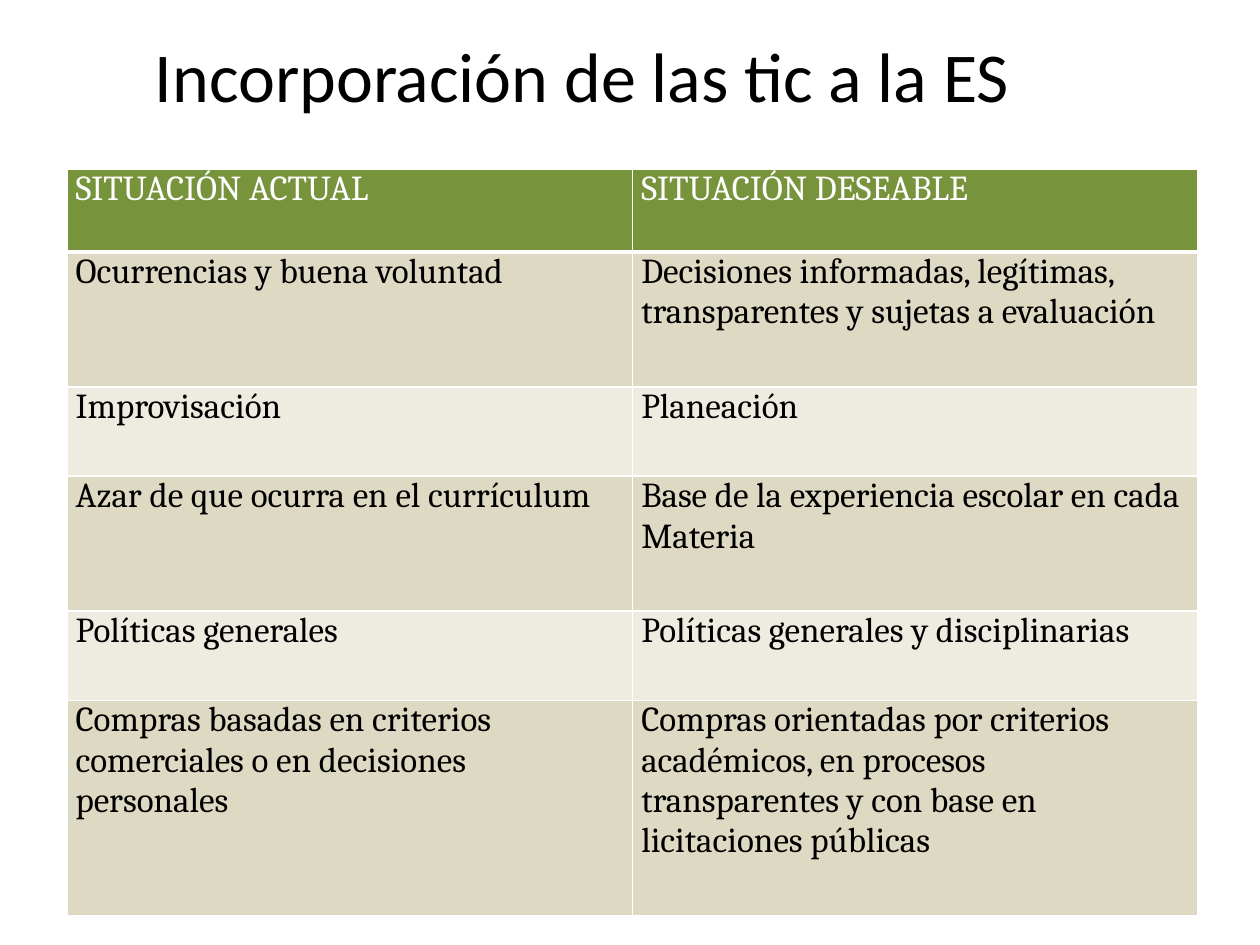
from dataclasses import dataclass

from lxml import etree
from pptx import Presentation, util as u
from pptx.dml.color import RGBColor
from pptx.enum import text
from pptx.oxml import ns


@dataclass(frozen=True)
class Theme:
    title_font: str = "Calibri"
    table_font: str = "Cambria"
    title_size: int = 40
    table_size: int = 20
    black: str = "000000"
    white: str = "FFFFFF"
    header_fill: str = "77933C"
    dark_band: str = "DDD9C3"
    light_band: str = "EEECE1"


@dataclass(frozen=True)
class Comparison:
    current: str
    desired: str
    height: float


THEME = Theme()
COLUMN_WIDTH = 4.49
COMPARISONS = [
    Comparison("SITUACIÓN ACTUAL", "SITUACIÓN DESEABLE", 0.66),
    Comparison("Ocurrencias y buena voluntad",
               "Decisiones informadas, legítimas, transparentes y sujetas a evaluación", 1.07),
    Comparison("Improvisación", "Planeación", 0.71),
    Comparison("Azar de que ocurra en el currículum",
               "Base de la experiencia escolar en cada Materia", 1.07),
    Comparison("Políticas generales", "Políticas generales y disciplinarias", 0.71),
    Comparison("Compras basadas en criterios comerciales o en decisiones personales",
               "Compras orientadas por criterios académicos, en procesos transparentes "
               "y con base en licitaciones públicas", 1.71),
]


def write_text(frame, content: str, *, font: str, size: int, color: str,
               align=text.PP_ALIGN.LEFT) -> None:
    """Put one formatted paragraph into a text frame."""
    frame.word_wrap = True
    paragraph = frame.paragraphs[0]
    paragraph.alignment = align
    run = paragraph.add_run()
    run.text = content
    run.font.name = font
    run.font.size = u.Pt(size)
    run.font.color.rgb = RGBColor.from_string(color)


def set_borders(cell, color: str, bottom_width: int) -> None:
    """Outline a cell; only its bottom edge may be thicker than 1 pt."""
    properties = cell._tc.get_or_add_tcPr()
    for edge, width in (("L", 1), ("R", 1), ("T", 1), ("B", bottom_width)):
        line = etree.SubElement(properties, ns.qn(f"a:ln{edge}"), w=str(u.Pt(width)))
        fill = etree.SubElement(line, ns.qn("a:solidFill"))
        etree.SubElement(fill, ns.qn("a:srgbClr"), val=color)


def draw_cell(cell, content: str, *, fill: str, color: str, bottom_width: int) -> None:
    cell.margin_left = cell.margin_right = u.Inches(0.07)
    cell.margin_top = cell.margin_bottom = 0
    cell.vertical_anchor = text.MSO_ANCHOR.TOP
    set_borders(cell, THEME.white, bottom_width)
    cell.fill.solid()
    cell.fill.fore_color.rgb = RGBColor.from_string(fill)
    write_text(cell.text_frame, content, font=THEME.table_font,
               size=THEME.table_size, color=color)


def draw_title(slide, content: str) -> None:
    title = slide.shapes.title
    title.left, title.top = u.Inches(0.03), u.Inches(0.09)
    title.width, title.height = u.Inches(9.18), u.Inches(1)
    title.text_frame.vertical_anchor = text.MSO_ANCHOR.MIDDLE
    write_text(title.text_frame, content, font=THEME.title_font, size=THEME.title_size,
               color=THEME.black, align=text.PP_ALIGN.CENTER)


def draw_table(slide, comparisons: list[Comparison]) -> None:
    height = sum(comparison.height for comparison in comparisons)
    table = slide.shapes.add_table(
        len(comparisons), 2, u.Inches(0.53), u.Inches(1.34),
        u.Inches(2 * COLUMN_WIDTH), u.Inches(height)).table
    for column in table.columns:
        column.width = u.Inches(COLUMN_WIDTH)
    for index, comparison in enumerate(comparisons):
        table.rows[index].height = u.Inches(comparison.height)
        # The header stands out; body rows alternate, dark band first
        if index == 0:
            fill, color, bottom_width = THEME.header_fill, THEME.white, 3
        else:
            fill = THEME.dark_band if index % 2 else THEME.light_band
            color, bottom_width = THEME.black, 1
        for column, content in enumerate((comparison.current, comparison.desired)):
            draw_cell(table.cell(index, column), content, fill=fill,
                      color=color, bottom_width=bottom_width)


def main() -> None:
    presentation = Presentation()
    presentation.slide_width, presentation.slide_height = u.Inches(10), u.Inches(7.5)
    slide = presentation.slides.add_slide(presentation.slide_layouts[5])
    draw_title(slide, "Incorporación de las tic a la ES")
    draw_table(slide, COMPARISONS)
    presentation.save("out.pptx")


if __name__ == "__main__":
    main()
